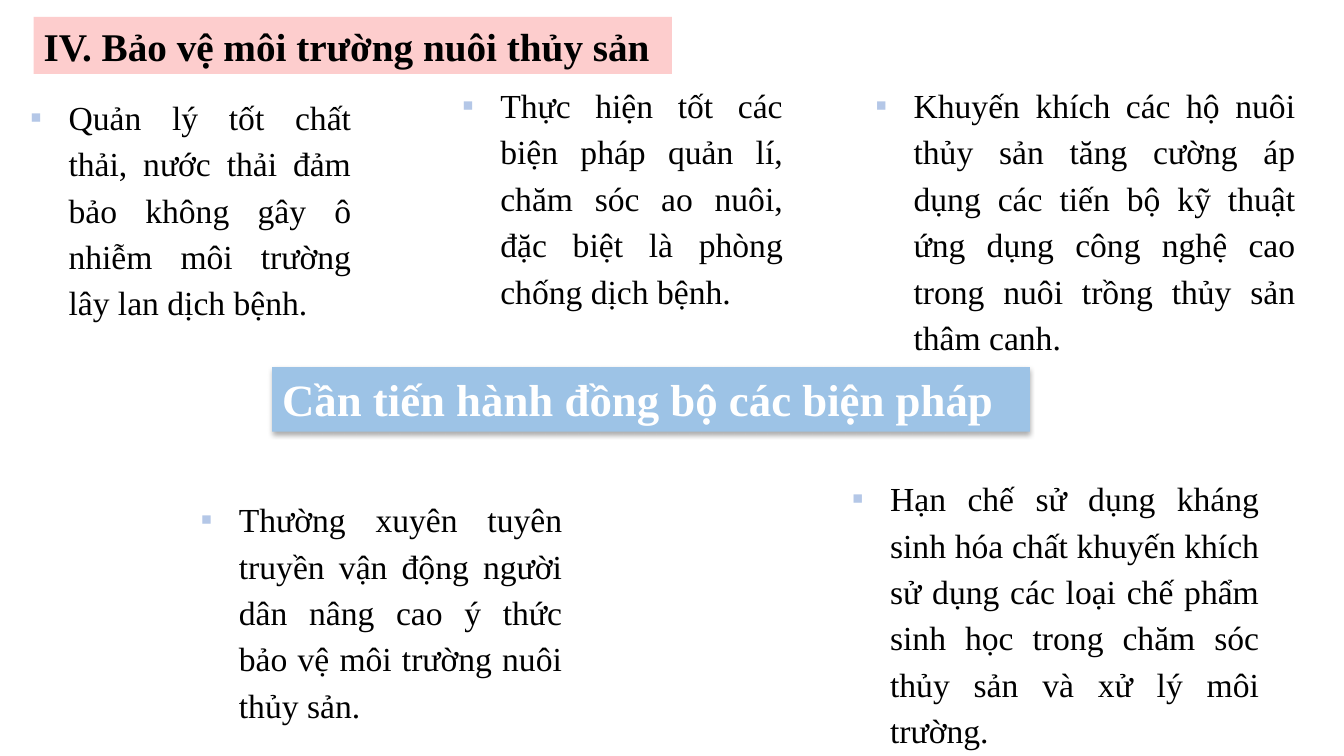
from dataclasses import dataclass

from lxml.etree import SubElement
from pptx import Presentation
from pptx.dml.color import RGBColor
from pptx.enum.shapes import MSO_SHAPE
from pptx.enum.text import MSO_ANCHOR, MSO_AUTO_SIZE, PP_ALIGN
from pptx.oxml.ns import qn
from pptx.shapes.autoshape import Shape
from pptx.util import Inches, Pt

FONT = "Times New Roman"
BLACK, WHITE = "000000", "FFFFFF"
PINK, SKY, PALE_BLUE = "FDCDCD", "9DC3E6", "B4C7E7"
COLUMNS, ROWS = 160, 90
COMPARISON_LAYOUT = 4
BULLET_INDENT = Inches(0.38)

deck = Presentation()
deck.slide_width, deck.slide_height = Inches(13.33), Inches(7.5)


@dataclass(frozen=True)
class Area:
    """Place on the grid of 160 columns by 90 rows."""
    column: float
    row: float
    columns: float
    rows: float


@dataclass(frozen=True)
class Measure:
    area: Area
    wording: str


HEADING_AREA = Area(4, 2, 76, 6.8)
BANNER_AREA = Area(32.4, 43.7, 90.2, 7.7)
MEASURES = [
    Measure(Area(2.4, 10.2, 40.6, 28.7),
            "Quản lý tốt chất thải, nước thải đảm bảo không gây ô nhiễm "
            "môi trường lây lan dịch bệnh."),
    Measure(Area(53.8, 8.8, 40.6, 28.7),
            "Thực hiện tốt các biện pháp quản lí, chăm sóc ao nuôi, "
            "đặc biệt là phòng chống dịch bệnh."),
    Measure(Area(103, 8.8, 52.4, 34.2),
            "Khuyến khích các hộ nuôi thủy sản tăng cường áp dụng các tiến bộ "
            "kỹ thuật ứng dụng công nghệ cao trong nuôi trồng thủy sản thâm canh."),
    Measure(Area(100.2, 55.6, 50.9, 34.2),
            "Hạn chế sử dụng kháng sinh hóa chất khuyến khích sử dụng các loại "
            "chế phẩm sinh học trong chăm sóc thủy sản và xử lý môi trường."),
    Measure(Area(22.7, 58.1, 45.4, 28.7),
            "Thường xuyên tuyên truyền vận động người dân nâng cao ý thức "
            "bảo vệ môi trường nuôi thủy sản."),
]


def color(code: str) -> RGBColor:
    return RGBColor.from_string(code)


def apply(target: object, formats: dict) -> None:
    for name, value in formats.items():
        setattr(target, name, value)


def place(shape: Shape, area: Area) -> None:
    apply(shape, {
        "left": round(area.column * deck.slide_width / COLUMNS),
        "top": round(area.row * deck.slide_height / ROWS),
        "width": round(area.columns * deck.slide_width / COLUMNS),
        "height": round(area.rows * deck.slide_height / ROWS),
    })


def write(shape: Shape, wording: str, size: int, ink: str, bold: bool,
          formats: dict) -> None:
    frame = shape.text_frame
    frame.text = wording
    apply(frame, {"word_wrap": True, "auto_size": MSO_AUTO_SIZE.NONE,
                  "vertical_anchor": MSO_ANCHOR.TOP})
    paragraph = frame.paragraphs[0]
    apply(paragraph, formats)
    font = paragraph.runs[0].font
    apply(font, {"name": FONT, "size": Pt(size), "bold": bold})
    font.color.rgb = color(ink)


def add_bullet(shape: Shape) -> None:
    properties = shape.text_frame.paragraphs[0]._p.get_or_add_pPr()
    properties.set("marL", str(BULLET_INDENT))
    properties.set("indent", str(-BULLET_INDENT))
    tint = SubElement(properties, qn("a:buClr"))
    SubElement(tint, qn("a:srgbClr"), val=PALE_BLUE)
    SubElement(properties, qn("a:buFont"), typeface=FONT)
    SubElement(properties, qn("a:buChar"), char="▪")


def draw_measure(shape: Shape, measure: Measure) -> None:
    place(shape, measure.area)
    write(shape, measure.wording, 24, BLACK, False, {
        "alignment": PP_ALIGN.JUSTIFY, "line_spacing": 1.15,
        "space_before": Pt(0), "space_after": Pt(10)})
    add_bullet(shape)


def draw_strip(shape: Shape, area: Area, wording: str, size: int,
               ink: str, paper: str) -> None:
    """Fill a one-line heading strip and set its bold text."""
    place(shape, area)
    shape.fill.solid()
    shape.fill.fore_color.rgb = color(paper)
    shape.line.fill.background()
    shape.shadow.inherit = False
    write(shape, wording, size, ink, True, {"alignment": PP_ALIGN.LEFT})


def drop_shadow(shape: Shape) -> None:
    effects = shape._element.spPr.find(qn("a:effectLst"))
    shadow = SubElement(effects, qn("a:outerShdw"), blurRad=str(Pt(3.5)),
                        dist=str(Pt(2.2)), dir="5400000", rotWithShape="0")
    shade = SubElement(shadow, qn("a:srgbClr"), val=BLACK)
    SubElement(shade, qn("a:alpha"), val="32000")


def main() -> None:
    slide = deck.slides.add_slide(deck.slide_layouts[COMPARISON_LAYOUT])
    heading, *bodies = slide.placeholders
    bodies.append(slide.shapes.add_textbox(0, 0, 0, 0))
    for body, measure in zip(bodies, MEASURES):
        draw_measure(body, measure)

    banner = slide.shapes.add_shape(MSO_SHAPE.RECTANGLE, 0, 0, 0, 0)
    draw_strip(banner, BANNER_AREA, "Cần tiến hành đồng bộ các biện pháp",
               32, WHITE, SKY)
    drop_shadow(banner)
    draw_strip(heading, HEADING_AREA, "IV. Bảo vệ môi trường nuôi thủy sản",
               28, BLACK, PINK)
    deck.save("out.pptx")


if __name__ == "__main__":
    main()
